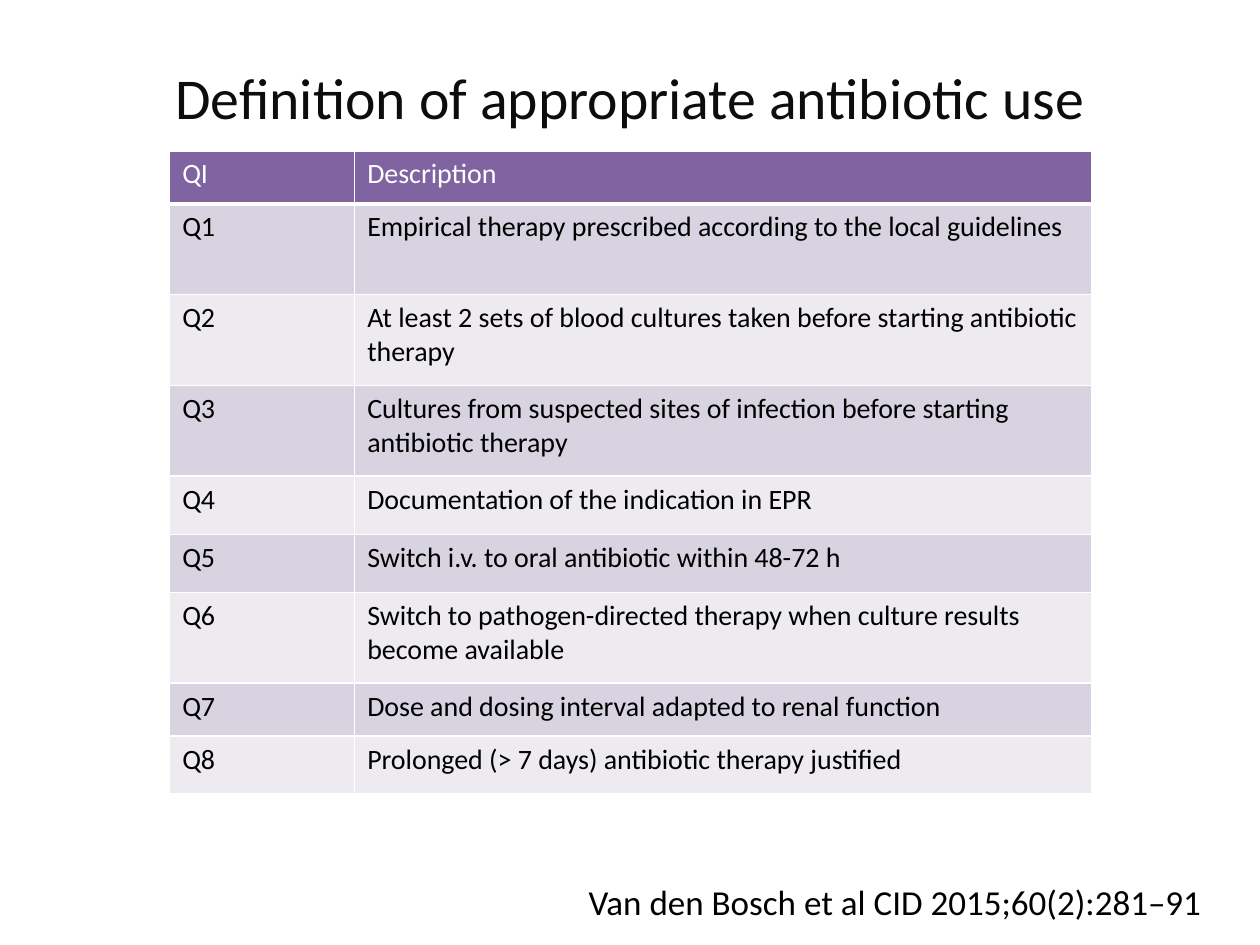
"""Build a slide with a table of quality indicators for antibiotic use."""
from lxml import etree
from pptx import Presentation
from pptx import util as u
from pptx.dml.color import RGBColor
from pptx.enum import text
from pptx.oxml import ns


def style(para, size, color):
    for span in para.runs:
        span.font.name = "Calibri"
        span.font.size = u.Pt(size)
        span.font.bold = False
        span.font.color.rgb = RGBColor.from_string(color)


def add_border(cell, side, width):
    line = etree.SubElement(cell._tc.get_or_add_tcPr(), ns.qn(f"a:ln{side}"), w=str(u.Pt(width)))
    fill = etree.SubElement(line, ns.qn("a:solidFill"))
    etree.SubElement(fill, ns.qn("a:srgbClr"), val="FFFFFF")


deck = Presentation()
deck.slide_width, deck.slide_height = u.Cm(25.4), u.Cm(19.05)
page = deck.slides.add_slide(deck.slide_layouts[1])

title, source = page.placeholders
title.left, title.top, title.width, title.height = u.Cm(0), u.Cm(1.12), u.Cm(25.4), u.Cm(2)
source.left, source.top, source.width, source.height = u.Cm(9.37), u.Cm(17.63), u.Cm(15.93), u.Cm(1.45)
for box, words, size, color in [
    (title, "Definition of appropriate antibiotic use", 33, "0D0D0D"),
    (source, "Van den Bosch et al CID 2015;60(2):281–91", 20, "000000"),
]:
    frame = box.text_frame
    frame.text = words
    frame.auto_size = text.MSO_AUTO_SIZE.NONE
    frame.vertical_anchor = text.MSO_ANCHOR.TOP
    style(frame.paragraphs[0], size, color)
title.text_frame.paragraphs[0].alignment = text.PP_ALIGN.CENTER

properties = source.text_frame.paragraphs[0]._p.get_or_add_pPr()
properties.set("marL", str(u.Cm(2.24)))
properties.set("indent", "0")
etree.SubElement(properties, ns.qn("a:buNone"))

indicators = [
    ("Description", 1.07),
    ("Empirical therapy prescribed according to the local guidelines", 1.83),
    ("At least 2 sets of blood cultures taken before starting antibiotic therapy", 1.83),
    ("Cultures from suspected sites of infection before starting antibiotic therapy", 1.83),
    ("Documentation of the indication in EPR", 1.17),
    ("Switch i.v. to oral antibiotic within 48-72 h", 1.17),
    ("Switch to pathogen-directed therapy when culture results become available", 1.83),
    ("Dose and dosing interval adapted to renal function", 1.07),
    ("Prolonged (> 7 days) antibiotic therapy justified", 1.17),
]
height = sum(row_height for _, row_height in indicators)
table = page.shapes.add_table(
    len(indicators), 2, u.Cm(3.42), u.Cm(3.04), u.Cm(18.59), u.Cm(height)
).table
table.columns[0].width, table.columns[1].width = u.Cm(3.73), u.Cm(14.86)

for number, (description, row_height) in enumerate(indicators):
    table.rows[number].height = u.Cm(row_height)
    header = number == 0
    fill = "8064A2" if header else ("EDEAF0", "D8D3E0")[number % 2]
    label = "QI" if header else f"Q{number}"
    for cell, words in zip(table.rows[number].cells, (label, description)):
        cell.text = words
        style(cell.text_frame.paragraphs[0], 16, "FFFFFF" if header else "000000")
        for side in "LRTB":
            add_border(cell, side, 3 if header and side == "B" else 1)
        cell.fill.solid()
        cell.fill.fore_color.rgb = RGBColor.from_string(fill)

deck.save("out.pptx")
